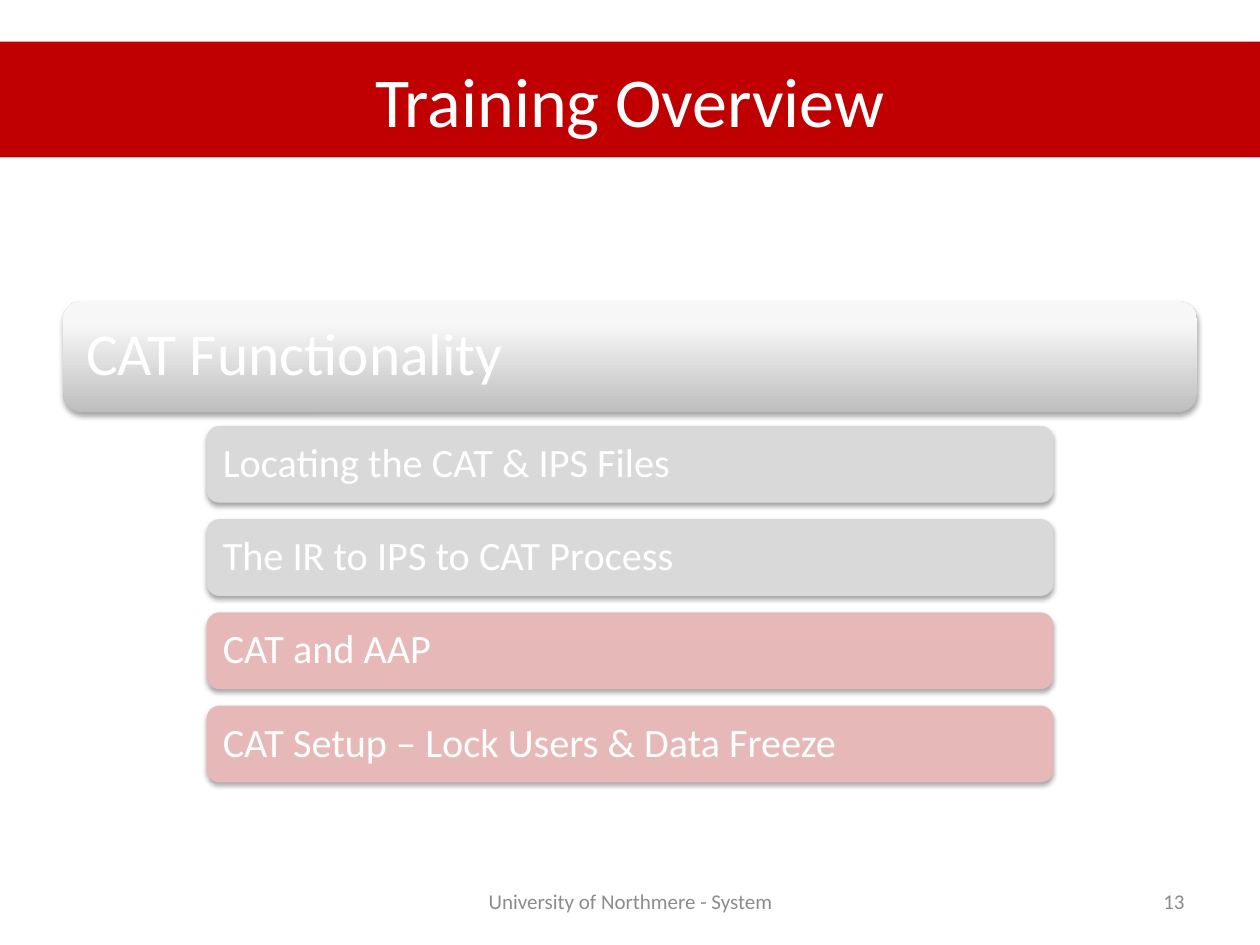
from dataclasses import dataclass

from lxml import etree
from pptx import Presentation
from pptx import util as u
from pptx.dml import color
from pptx.enum import shapes, text
from pptx.oxml import ns

FONT = "Calibri"
WHITE = "FFFFFF"
RED = "C00000"
GRAY = "D9D9D9"
PINK = "E6B9B8"
FOOTER_GRAY = "8C8C8C"
HEADING_STOPS = ((0, "BEBEBE"), (80, "F7F7F7"), (100, "F8F8F8"))
TOPIC_TOP, TOPIC_PITCH = 3.38, 0.74


@dataclass
class Area:
    left: float
    top: float
    width: float
    height: float

    def lengths(self):
        return [u.Inches(v) for v in (self.left, self.top, self.width, self.height)]


@dataclass
class Topic:
    label: str
    fill: str


TOPICS = [
    Topic("Locating the CAT & IPS Files", GRAY),
    Topic("The IR to IPS to CAT Process", GRAY),
    Topic("CAT and AAP", PINK),
    Topic("CAT Setup – Lock Users & Data Freeze", PINK),
]


def rgb(value: str) -> color.RGBColor:
    return color.RGBColor.from_string(value)


def add_node(parent, tag: str, **attributes):
    node = etree.SubElement(parent, ns.qn(tag))
    for name, value in attributes.items():
        node.set(name, str(value))
    return node


def write(box, label: str, *, size: float, ink: str = WHITE,
          align=text.PP_ALIGN.LEFT, inset: float = 0.1, inset_y: float = 0.05,
          spacing: float = 1.0, before: float = 0) -> None:
    frame = box.text_frame
    frame.word_wrap = True
    frame.vertical_anchor = text.MSO_ANCHOR.MIDDLE
    frame.margin_left = frame.margin_right = u.Inches(inset)
    frame.margin_top = frame.margin_bottom = u.Inches(inset_y)
    para = frame.paragraphs[0]
    para.alignment = align
    para.line_spacing = spacing
    para.space_before = u.Pt(before)
    span = para.add_run()
    span.text = label
    span.font.name = FONT
    span.font.size = u.Pt(size)
    span.font.color.rgb = rgb(ink)


def add_box(page, kind, area: Area, fill: str):
    box = page.shapes.add_shape(kind, *area.lengths())
    box.fill.solid()
    box.fill.fore_color.rgb = rgb(fill)
    box.line.fill.background()
    box.shadow.inherit = False
    return box


def add_panel(page, area: Area, fill: str, label: str, size: float, inset: float):
    panel = add_box(page, shapes.MSO_SHAPE.ROUNDED_RECTANGLE, area, fill)
    effects = panel.element.spPr.find(ns.qn("a:effectLst"))
    shadow = add_node(effects, "a:outerShdw", blurRad=u.Pt(3.1), dist=u.Pt(1.8),
                      dir=90 * 60000, rotWithShape=0)
    shade = add_node(shadow, "a:srgbClr", val="000000")
    add_node(shade, "a:alpha", val=35000)
    write(panel, label, size=size, inset=inset, inset_y=inset, spacing=0.9)
    return panel


def apply_gradient(panel, stops) -> None:
    panel.fill.gradient()
    panel.fill.gradient_angle = 90
    stop_list = panel.element.spPr.find(".//" + ns.qn("a:gsLst"))
    for stop in list(stop_list):
        stop_list.remove(stop)
    for position, value in stops:
        stop = add_node(stop_list, "a:gs", pos=position * 1000)
        add_node(stop, "a:srgbClr", val=value)


def add_footer(page, area: Area, label: str, align) -> None:
    box = page.shapes.add_textbox(*area.lengths())
    write(box, label, size=12, ink=FOOTER_GRAY, align=align)


def main() -> None:
    deck = Presentation()
    deck.slide_width, deck.slide_height = u.Inches(10), u.Inches(7.5)
    page = deck.slides.add_slide(deck.slide_layouts[6])

    heading = add_panel(page, Area(0.5, 2.39, 9, 0.88), GRAY, "CAT Functionality", 34, 0.14)
    apply_gradient(heading, HEADING_STOPS)
    for row, topic in enumerate(TOPICS):
        area = Area(1.64, TOPIC_TOP + row * TOPIC_PITCH, 6.72, 0.61)
        add_panel(page, area, topic.fill, topic.label, 23, 0.1)

    add_footer(page, Area(3.42, 6.95, 3.17, 0.4), "University of Northmere - System",
               text.PP_ALIGN.CENTER)
    add_footer(page, Area(7.17, 6.95, 2.33, 0.4), "13", text.PP_ALIGN.RIGHT)

    title = add_box(page, shapes.MSO_SHAPE.RECTANGLE, Area(0, 0.33, 10, 0.92), RED)
    write(title, "Training Overview", size=40, align=text.PP_ALIGN.CENTER, before=8)
    deck.save("out.pptx")


if __name__ == "__main__":
    main()
